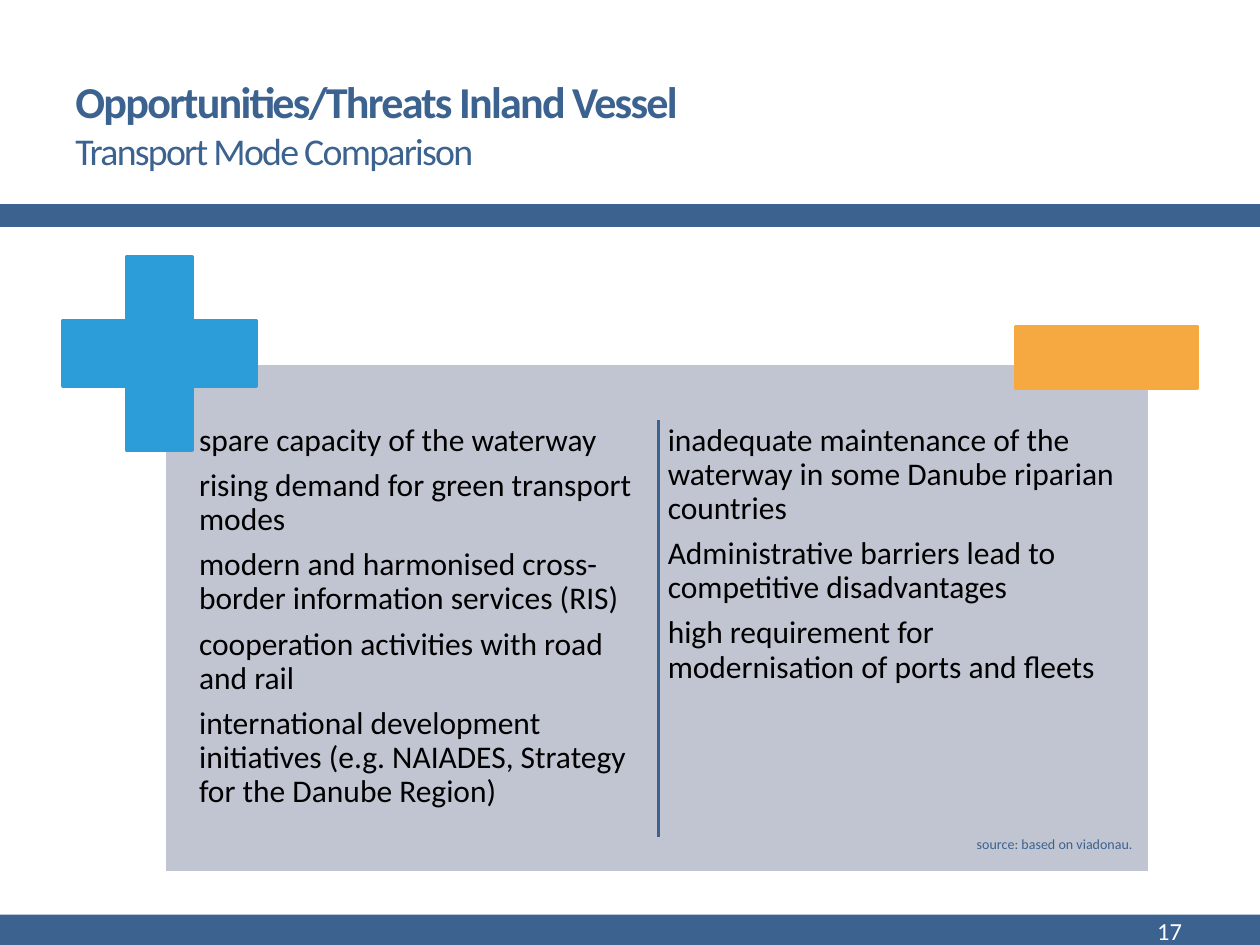
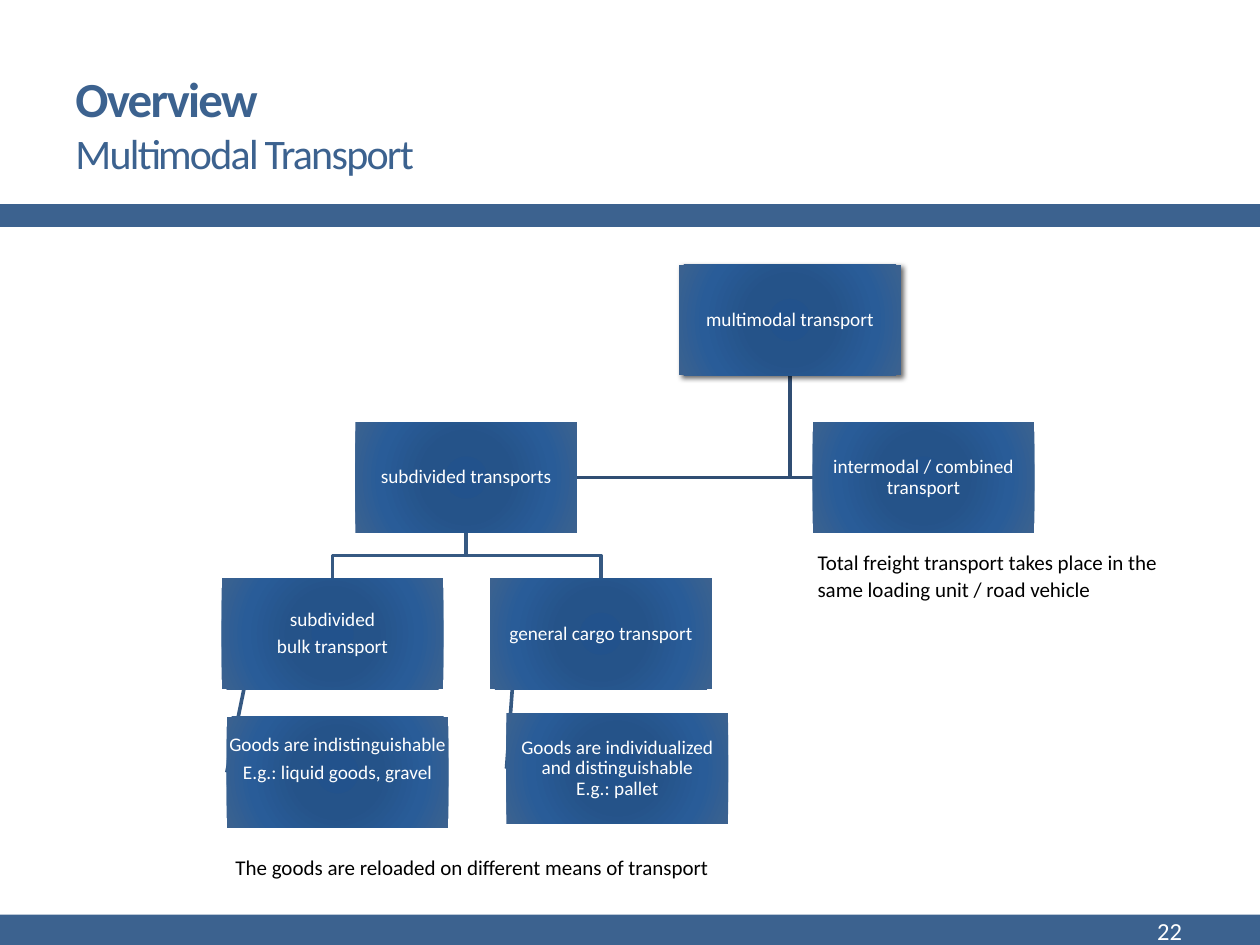
from typing import NamedTuple

from lxml import etree
from pptx import Presentation
from pptx.dml.color import RGBColor
from pptx.enum.shapes import MSO_CONNECTOR, MSO_SHAPE
from pptx.enum.text import MSO_ANCHOR, PP_ALIGN
from pptx.oxml import parse_xml
from pptx.oxml.ns import nsdecls, qn
from pptx.util import Inches, Pt

RECT, PLUS = MSO_SHAPE.RECTANGLE, MSO_SHAPE.CROSS
STRAIGHT = MSO_CONNECTOR.STRAIGHT
TOP, MID = MSO_ANCHOR.TOP, MSO_ANCHOR.MIDDLE
LEFT, RIGHT, CENTER = PP_ALIGN.LEFT, PP_ALIGN.RIGHT, PP_ALIGN.CENTER

NAVY = RGBColor(0x3C, 0x62, 0x8F)
STEEL = RGBColor(0x36, 0x59, 0x82)
DEEP = RGBColor(0x30, 0x4E, 0x73)
GREY = RGBColor(0xC0, 0xC5, 0xD1)
SKY = RGBColor(0x2D, 0x9D, 0xD9)
AMBER = RGBColor(0xF7, 0xA9, 0x41)
WHITE = RGBColor(0xFF, 0xFF, 0xFF)
BLACK = RGBColor(0, 0, 0)
GLOW = [(0, "22528C"), (34, "255389"), (70, "295C98"), (100, "3C628F")]

FONT = "Calibri"
STROKE = Pt(2.08)
COLS, ROWS = 100, 75
CELL = Inches(0.1)


def grid(count):
    """Turn a count of grid cells into a length."""
    return round(count * CELL)


class Box(NamedTuple):
    """A region, in grid columns and rows."""
    x: float
    y: float
    w: float
    h: float

    def inner(self, x, y, w, h):
        return Box(self.x + x, self.y + y, w, h)

    def spot(self, across, down):
        """The point at the given shares of width and height."""
        return self.x + across * self.w, self.y + down * self.h

    def place(self):
        return [grid(n) for n in self]


PAGE = Box(0, 0, COLS, ROWS)


def draw(slide, box, fill=None, line=None, kind=RECT):
    shape = slide.shapes.add_shape(kind, *box.place())
    shape.shadow.inherit = False
    if fill is None:
        shape.fill.background()
    else:
        shape.fill.solid()
        shape.fill.fore_color.rgb = fill
    if line is None:
        shape.line.fill.background()
    else:
        shape.line.color.rgb = line
        shape.line.width = STROKE
    return shape


def style(run, size, color, bold=False):
    font = run.font
    font.name, font.size, font.bold = FONT, Pt(size), bold
    font.color.rgb = color


def write(shape, texts, size, color, align=LEFT, anchor=TOP,
          pad=None, lead=None, gap=0):
    """Fill a shape with paragraphs; gap is a share of the text size."""
    frame = shape.text_frame
    frame.word_wrap = True
    frame.vertical_anchor = anchor
    if pad is not None:
        frame.margin_left = frame.margin_right = grid(pad)
        frame.margin_top = frame.margin_bottom = grid(pad)
    for i, text in enumerate(texts):
        para = frame.add_paragraph() if i else frame.paragraphs[0]
        para.alignment = align
        para.space_after = Pt(gap * size)
        if lead:
            para.line_spacing = lead
        for j, row in enumerate(text.split("\n")):
            if j:
                para.add_line_break()
            run = para.add_run()
            run.text = row
            style(run, size, color)


def label(slide, box, texts, size, color, **look):
    shape = slide.shapes.add_textbox(*box.place())
    write(shape, texts, size, color, **look)


def link(slide, start, end, color):
    ends = [grid(n) for n in (*start, *end)]
    line = slide.shapes.add_connector(STRAIGHT, *ends)
    line.line.color.rgb = color
    line.line.width = STROKE
    etree.SubElement(line.element.spPr, qn("a:effectLst"))
    return line


def bend(slide, points, color):
    """Draw an open line with corners."""
    first, *rest = [(grid(x), grid(y)) for x, y in points]
    trace = slide.shapes.build_freeform(*first)
    trace.add_line_segments(rest, close=False)
    shape = trace.convert_to_shape()
    shape.shadow.inherit = False
    shape.fill.background()
    shape.line.color.rgb = color
    shape.line.width = STROKE


def glow(shape):
    """Give a shape a round gradient fill."""
    stops = "".join(
        f'<a:gs pos="{pos * 1000}"><a:srgbClr val="{color}"/></a:gs>'
        for pos, color in GLOW)
    fill = parse_xml(
        f'<a:gradFill {nsdecls("a")} rotWithShape="1">'
        f'<a:gsLst>{stops}</a:gsLst><a:path path="circle">'
        '<a:fillToRect l="100000" t="100000" r="100000" b="100000"/>'
        '</a:path></a:gradFill>')
    props = shape.element.spPr
    props.replace(props.find(qn("a:noFill")), fill)


def shade(shape):
    """Add a soft shadow to the lower right."""
    shape.element.spPr.find(qn("a:effectLst")).append(parse_xml(
        f'<a:outerShdw {nsdecls("a")} blurRad="38100" dist="25400" '
        'dir="2700000" algn="tl" rotWithShape="0"><a:srgbClr val="000000">'
        '<a:alpha val="60000"/></a:srgbClr></a:outerShdw>'))


def head(slide, box, title, topic, size, small):
    shape = slide.shapes.add_textbox(*box.place())
    frame = shape.text_frame
    frame.word_wrap = True
    frame.vertical_anchor = MID
    para = frame.paragraphs[0]
    for text, high, bold in ((title, size, True), (topic, small, False)):
        if not bold:
            para.add_line_break()
        run = para.add_run()
        run.text = text
        style(run, high, NAVY, bold)
        run.font._element.set("spc", "-100")


def foot(slide, box, number):
    draw(slide, box, NAVY)
    label(slide, box.inner(83.1, 0.2, 11.7, 2.2), [number], 14, WHITE,
          align=RIGHT, anchor=MID)


def frame(deck, title, topic, size, small, number):
    """Add a slide with title, band and footer."""
    slide = deck.slides.add_slide(deck.slide_layouts[6])
    head(slide, PAGE.inner(5, 4.4, 52.1, 10.8), title, topic, size, small)
    draw(slide, PAGE.inner(0, 16.2, COLS, 1.8), NAVY)
    foot(slide, PAGE.inner(0, 72.6, COLS, 2.4), number)
    return slide


def compare(slide, box, pros, cons, source):
    """Two lists on a panel, with a plus and a minus sign."""
    draw(slide, box, GREY, WHITE)
    for x, texts in ((2.4, pros), (39.6, cons)):
        label(slide, box.inner(x, 4.5, 36.4, 34.6), texts, 18, BLACK,
              pad=0.4, lead=0.9, gap=0.35)
    plus = draw(slide, box.inner(-8, -8.4, 15.3, 15.3), SKY, SKY, PLUS)
    plus.adjustments[0] = 0.33
    draw(slide, box.inner(67.6, -2.9, 14.4, 4.9), AMBER, AMBER)
    rule = box.inner(39.25, 4.5, 0, 33.1)
    link(slide, rule.spot(0, 0), rule.spot(0, 1), NAVY)
    label(slide, box.inner(53.5, 37, 24.4, 2.4), [source], 8, NAVY,
          align=RIGHT)


def tree(slide, box, nodes, notes):
    """Nodes are name: (column, row, texts), joined by lines."""
    spots = {name: box.inner(x, y, 17.6, 8.8)
             for name, (x, y, _) in nodes.items()}
    root, split = spots["root"], spots["split"]

    for side in (split.spot(1, 0.5), spots["joint"].spot(0, 0.5)):
        start = root.spot(0.5, 1)
        bend(slide, [start, (start[0], side[1]), side], DEEP)

    for name in ("bulk", "cargo"):
        start, end = split.spot(0.5, 1), spots[name].spot(0.5, 0)
        half = (start[1] + end[1]) / 2
        bend(slide, [start, (start[0], half), (end[0], half), end], STEEL)

    shapes = {}
    for name, (_, _, texts) in nodes.items():
        shape = shapes[name] = draw(slide, spots[name])
        glow(shape)
        write(shape, texts, 11, WHITE, align=CENTER, anchor=MID,
              pad=0.1, lead=0.9, gap=0.35)
    shade(shapes["root"])
    shapes["loose"].text_frame.margin_bottom = grid(2.2)

    for name, leaf in (("bulk", "loose"), ("cargo", "packed")):
        line = link(slide, spots[name].spot(0.1, 1),
                    spots[leaf].spot(0, 0.5), STEEL)
        line.end_connect(shapes[leaf], 1)
        shapes[name].element.addprevious(line.element)

    for area, text in notes:
        label(slide, box.inner(*area), [text], 12, BLACK, lead=1.07)


PROS = [
    "spare capacity of the waterway",
    "rising demand for green transport modes",
    "modern and harmonised cross-border information services (RIS)",
    "cooperation activities with road and rail",
    "international development initiatives (e.g. NAIADES, Strategy for the "
    "Danube Region)",
]
CONS = [
    "inadequate maintenance of the waterway in some Danube riparian countries",
    "Administrative barriers lead to competitive disadvantages",
    "high requirement for modernisation of ports and fleets",
]
NODES = {
    "root": (36.3, 0, ["multimodal transport"]),
    "split": (10.6, 12.5, ["subdivided transports"]),
    "joint": (46.9, 12.5, ["intermodal / combined transport"]),
    "bulk": (0, 24.9, ["subdivided", "bulk transport"]),
    "cargo": (21.3, 24.9, ["general cargo transport"]),
    "loose": (0.4, 35.9, ["Goods are indistinguishable",
                          "E.g.: liquid goods, gravel"]),
    "packed": (22.6, 35.6, ["Goods are individualized and distinguishable\n"
                            "E.g.: pallet"]),
}
NOTES = [
    ((0.1, 46.2, 43.7, 3.2),
     "The goods are reloaded on different means of transport"),
    ((46.3, 22, 30.8, 5.3),
     "Total freight transport takes place in the same loading unit / "
     "road vehicle"),
]


def main():
    deck = Presentation()
    deck.slide_width, deck.slide_height = grid(COLS), grid(ROWS)

    slide = frame(deck, "Opportunities/Threats Inland Vessel",
                  "Transport Mode Comparison", 25.2, 21.6, "17")
    compare(slide, PAGE.inner(13, 28.8, 78.3, 40.5), PROS, CONS,
            "source: based on viadonau.")

    slide = frame(deck, "Overview", "Multimodal Transport", 28, 24, "22")
    tree(slide, PAGE.inner(17.6, 21, 77.1, 49.4), NODES, NOTES)

    deck.save("out.pptx")


if __name__ == "__main__":
    main()
